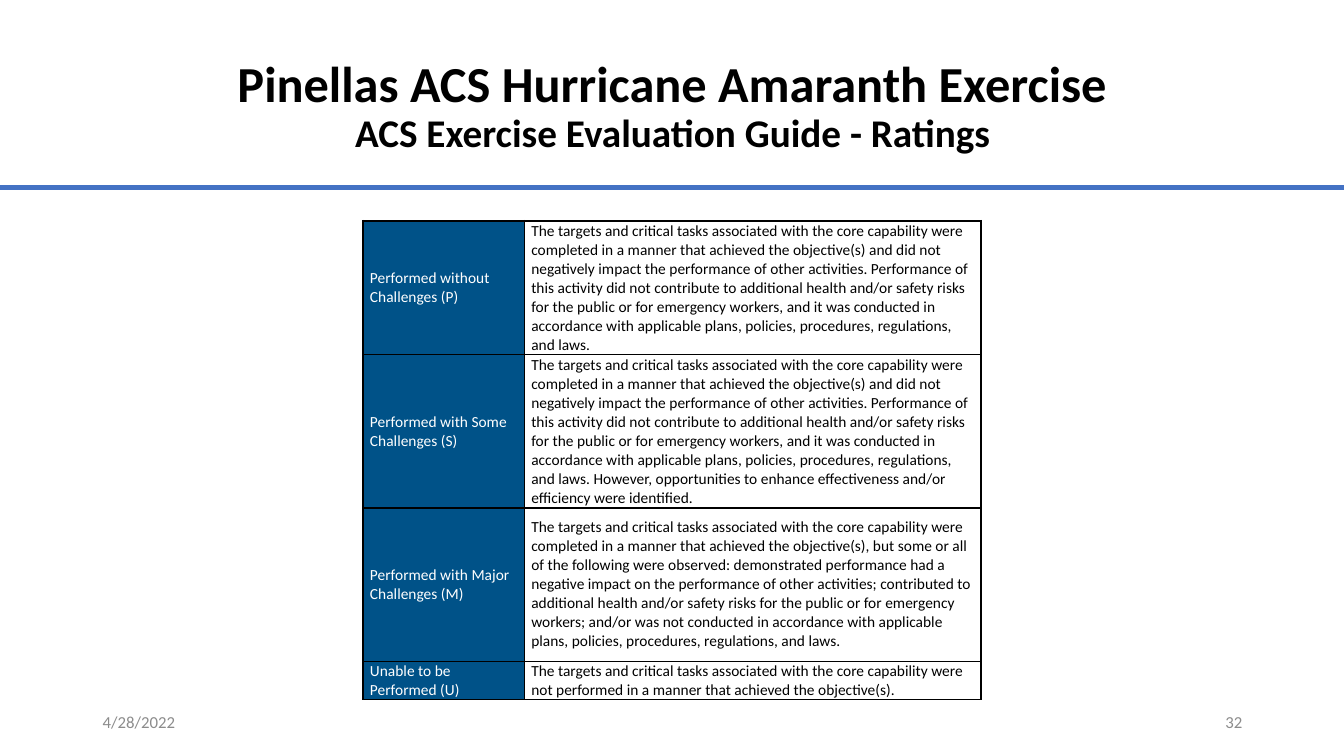
from lxml import etree
from pptx import Presentation, util as u
from pptx.dml.color import RGBColor
from pptx.enum import shapes, text
from pptx.oxml import ns

WIDTH, HEIGHT = 13.33, 7.5
FONT = "Calibri"
BLACK = RGBColor(0x00, 0x00, 0x00)
WHITE = RGBColor(0xFF, 0xFF, 0xFF)
GRAY = RGBColor(0x8C, 0x8C, 0x8C)
NAVY = RGBColor(0x00, 0x52, 0x88)
BLUE = RGBColor(0x44, 0x72, 0xC4)

COLUMNS = [1.6, 4.53]
ROWS = [1.33, 1.52, 1.52, 0.38]
TASKS = "The targets and critical tasks associated with the core capability were "
ACHIEVED = TASKS + "completed in a manner that achieved the objective(s)"
UNIMPAIRED = ACHIEVED + (
    " and did not negatively impact the performance of other activities. "
    "Performance of this activity did not contribute to additional health and/or "
    "safety risks for the public or for emergency workers, and it was conducted in "
    "accordance with applicable plans, policies, procedures, regulations, and laws."
)
RATINGS = [
    ("Performed without Challenges (P)", UNIMPAIRED),
    ("Performed with Some Challenges (S)", UNIMPAIRED + (
        " However, opportunities to enhance effectiveness and/or efficiency "
        "were identified.")),
    ("Performed with Major Challenges (M)", ACHIEVED + (
        ", but some or all of the following were observed: demonstrated performance "
        "had a negative impact on the performance of other activities; contributed to "
        "additional health and/or safety risks for the public or for emergency workers; "
        "and/or was not conducted in accordance with applicable plans, policies, "
        "procedures, regulations, and laws.")),
    ("Unable to be Performed (U)", TASKS + (
        "not performed in a manner that achieved the objective(s).")),
]


def add_run(paragraph, words, size, color, bold=False):
    run = paragraph.add_run()
    run.text = words
    run.font.name = FONT
    run.font.size = u.Pt(size)
    run.font.color.rgb = color
    run.font.bold = bold


def add_title(slide):
    title = slide.shapes.title
    title.left, title.top = u.Inches(1.76), u.Inches(0.4)
    title.width, title.height = u.Inches(9.82), u.Inches(1.34)
    frame = title.text_frame
    frame.word_wrap = True
    frame.auto_size = text.MSO_AUTO_SIZE.NONE
    frame.vertical_anchor = text.MSO_ANCHOR.MIDDLE
    paragraph = frame.paragraphs[0]
    paragraph.alignment = text.PP_ALIGN.CENTER
    paragraph.line_spacing = 0.9
    add_run(paragraph, "Pinellas ACS Hurricane Amaranth Exercise", 36, BLACK, True)
    paragraph.add_line_break()
    add_run(paragraph, "ACS Exercise Evaluation Guide - Ratings", 28, BLACK, True)


def add_rule(slide, top):
    rule = slide.shapes.add_connector(
        shapes.MSO_CONNECTOR.STRAIGHT, 0, u.Inches(top), u.Inches(WIDTH), u.Inches(top))
    rule.line.color.rgb = BLUE
    rule.line.width = u.Pt(3)
    etree.SubElement(rule._element.spPr, ns.qn("a:effectLst"))


def add_footer(slide, words, left, alignment):
    box = slide.shapes.add_textbox(
        u.Inches(left), u.Inches(6.96), u.Inches(3), u.Inches(0.4))
    frame = box.text_frame
    frame.word_wrap = True
    frame.vertical_anchor = text.MSO_ANCHOR.MIDDLE
    paragraph = frame.paragraphs[0]
    paragraph.alignment = alignment
    add_run(paragraph, words, 12, GRAY)


def set_borders(cell, outer_sides):
    properties = cell._tc.get_or_add_tcPr()
    for side, outer in outer_sides.items():
        width = u.Pt(1.5 if outer else 1)
        line = etree.SubElement(properties, ns.qn("a:ln" + side), w=str(width))
        fill = etree.SubElement(line, ns.qn("a:solidFill"))
        etree.SubElement(fill, ns.qn("a:srgbClr"), val=str(BLACK))


def fill_cell(cell, words, is_label):
    cell.margin_left = cell.margin_right = u.Inches(0.07)
    cell.margin_top = cell.margin_bottom = 0
    cell.vertical_anchor = text.MSO_ANCHOR.MIDDLE
    if is_label:
        cell.fill.solid()
        cell.fill.fore_color.rgb = NAVY
    else:
        cell.fill.background()
    add_run(cell.text_frame.paragraphs[0], words, 11, WHITE if is_label else BLACK)


def add_ratings(slide):
    frame = slide.shapes.add_table(
        len(ROWS), len(COLUMNS), u.Inches(3.6), u.Inches(2.19),
        u.Inches(sum(COLUMNS)), u.Inches(sum(ROWS)))
    table = frame.table
    table.first_row = table.horz_banding = False
    for column, width in zip(table.columns, COLUMNS):
        column.width = u.Inches(width)
    for row, height in zip(table.rows, ROWS):
        row.height = u.Inches(height)
    for row_index, rating in enumerate(RATINGS):
        for column_index, words in enumerate(rating):
            cell = table.cell(row_index, column_index)
            set_borders(cell, {
                "L": column_index == 0,
                "R": column_index == len(COLUMNS) - 1,
                "T": row_index == 0,
                "B": row_index == len(ROWS) - 1,
            })
            fill_cell(cell, words, column_index == 0)


def main():
    presentation = Presentation()
    presentation.slide_width = u.Inches(WIDTH)
    presentation.slide_height = u.Inches(HEIGHT)
    slide = presentation.slides.add_slide(presentation.slide_layouts[5])
    add_rule(slide, 1.86)
    add_title(slide)
    add_footer(slide, "4/28/2022", 0.92, text.PP_ALIGN.LEFT)
    add_footer(slide, "32", 9.42, text.PP_ALIGN.RIGHT)
    add_ratings(slide)
    presentation.save("out.pptx")


if __name__ == "__main__":
    main()
